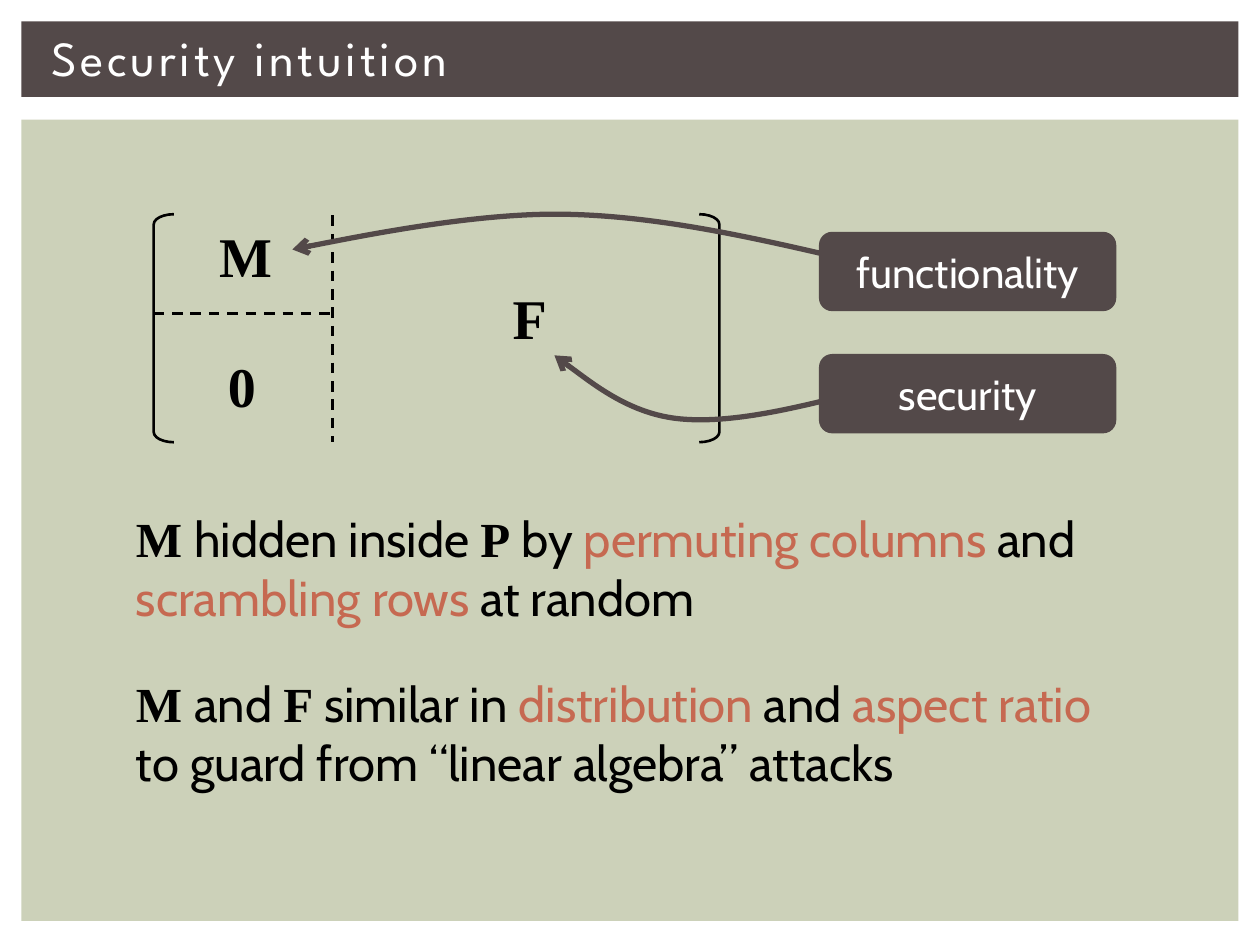
from dataclasses import dataclass

from lxml import etree
from pptx import Presentation
from pptx.dml.color import RGBColor
from pptx.enum.dml import MSO_LINE
from pptx.enum.shapes import MSO_CONNECTOR, MSO_SHAPE
from pptx.enum.text import MSO_ANCHOR, PP_ALIGN
from pptx.oxml.ns import qn
from pptx.util import Inches, Pt

RECT, ROUNDED = MSO_SHAPE.RECTANGLE, MSO_SHAPE.ROUNDED_RECTANGLE
LEFT_BRACKET, RIGHT_BRACKET = MSO_SHAPE.LEFT_BRACKET, MSO_SHAPE.RIGHT_BRACKET
STRAIGHT, DASH = MSO_CONNECTOR.STRAIGHT, MSO_LINE.DASH
MIDDLE, CENTER = MSO_ANCHOR.MIDDLE, PP_ALIGN.CENTER

COLORS = {"white": "FFFFFF", "black": "000000", "brown": "534949",
          "sage": "CCD1B9", "rust": "C66951"}
STYLES = {
    "title": ({"name": "League Spartan", "size": Pt(28)}, "white"),
    "matrix": ({"name": "Times New Roman", "size": Pt(32), "bold": True}, "black"),
    "button": ({"name": "Cabin", "size": Pt(24)}, "white"),
    "math": ({"name": "Times New Roman", "size": Pt(28), "bold": True}, "black"),
    "body": ({"name": "Cabin", "size": Pt(28)}, "black"),
    "key": ({"name": "Cabin", "size": Pt(28)}, "rust"),
}
BREAK = "\n"


@dataclass
class Box:
    x: float
    y: float
    w: float
    h: float

    def emu(self) -> list:
        return [Inches(v) for v in (self.x, self.y, self.w, self.h)]


@dataclass
class Span:
    text: str
    style: str


@dataclass
class Label:
    box: Box
    paragraphs: list[list[Span]]
    wrap: bool = False


def rgb(name: str) -> RGBColor:
    return RGBColor.from_string(COLORS[name])


def set_line(sp, color: str, width: float) -> None:
    sp.line.color.rgb = rgb(color)
    sp.line.width = Pt(width)


def write(tf, paragraphs: list[list[Span]]) -> None:
    for i, spans in enumerate(paragraphs):
        p = tf.add_paragraph() if i else tf.paragraphs[0]
        for span in spans:
            if span.text == BREAK:
                p.add_line_break()
                continue
            r = p.add_run()
            r.text = span.text
            values, color = STYLES[span.style]
            for key, value in values.items():
                setattr(r.font, key, value)
            r.font.color.rgb = rgb(color)


def add_label(s, label: Label):
    tf = s.shapes.add_textbox(*label.box.emu()).text_frame
    tf.word_wrap = label.wrap
    write(tf, label.paragraphs)
    return tf


def add_block(s, kind, box: Box, fill: str):
    sp = s.shapes.add_shape(kind, *box.emu())
    sp.shadow.inherit = False
    sp.fill.solid()
    sp.fill.fore_color.rgb = rgb(fill)
    sp.line.fill.background()
    return sp


def add_button(s, box: Box, text: str) -> None:
    tf = add_block(s, ROUNDED, box, "brown").text_frame
    tf.vertical_anchor = MIDDLE
    write(tf, [[Span(text, "button")]])
    tf.paragraphs[0].alignment = CENTER


def add_bracket(s, kind, box: Box) -> None:
    sp = s.shapes.add_shape(kind, *box.emu())
    sp.shadow.inherit = False
    sp.adjustments[0] = 0.51
    sp.fill.background()
    set_line(sp, "black", 1.5)


def add_divider(s, x1: float, y1: float, x2: float, y2: float) -> None:
    line = s.shapes.add_connector(STRAIGHT, *[Inches(v) for v in (x1, y1, x2, y2)])
    set_line(line, "black", 1.5)
    line.line.dash_style = DASH
    etree.SubElement(line._element.spPr, qn("a:effectLst"))


def add_curved_arrow(s, points: list[tuple[float, float]]) -> None:
    start, *rest = [(Inches(x), Inches(y)) for x, y in points]
    builder = s.shapes.build_freeform(*start)
    builder.add_line_segments(rest, close=False)
    sp = builder.convert_to_shape()
    sp.shadow.inherit = False
    sp.fill.background()
    set_line(sp, "brown", 3)
    segments = list(sp._element.iter(qn("a:lnTo")))
    outline = segments[0].getparent()
    for i in range(0, len(segments), 3):
        curve = etree.SubElement(outline, qn("a:cubicBezTo"))
        for segment in segments[i:i + 3]:
            curve.append(segment[0])
            outline.remove(segment)
    etree.SubElement(sp.line._get_or_add_ln(), qn("a:tailEnd"), type="arrow")


def main() -> None:
    prs = Presentation()
    prs.slide_width, prs.slide_height = Inches(10), Inches(7.5)
    s = prs.slides.add_slide(prs.slide_layouts[6])

    add_block(s, RECT, Box(0.17, 0.95, 9.66, 6.36), "sage")
    add_block(s, RECT, Box(0.17, 0.17, 9.66, 0.6), "brown")
    title = add_label(s, Label(Box(0.31, 0.16, 9.4, 0.59),
                               [[Span("Security intuition", "title")]], True))
    title.vertical_anchor = MIDDLE
    title.paragraphs[0].runs[0].font._element.set("spc", "200")

    add_divider(s, 1.22, 2.49, 2.64, 2.49)
    for kind, x in ((LEFT_BRACKET, 1.22), (RIGHT_BRACKET, 5.55)):
        add_bracket(s, kind, Box(x, 1.7, 0.16, 1.81))
    for text, x, y, w in (("M", 1.64, 1.71, 0.61), ("F", 3.97, 2.2, 0.48),
                          ("0", 1.71, 2.74, 0.41)):
        add_label(s, Label(Box(x, y, w, 0.64), [[Span(text, "matrix")]]))
    add_divider(s, 2.64, 1.71, 2.64, 3.51)

    for text, y in (("functionality", 1.84), ("security", 2.81)):
        add_button(s, Box(6.5, y, 2.36, 0.63), text)
    add_curved_arrow(s, [(6.64, 2.04), (5.91, 1.87), (5.18, 1.71), (4.46, 1.7),
                         (3.74, 1.69), (2.32, 1.98), (2.32, 1.98)])
    add_curved_arrow(s, [(6.78, 3.12), (6.27, 3.25), (5.76, 3.37), (5.36, 3.32),
                         (4.97, 3.27), (4.4, 2.82), (4.4, 2.82)])

    add_label(s, Label(Box(0.98, 3.99, 7.82, 1.04), [
        [Span("M ", "math"), Span("hidden inside ", "body"), Span("P", "math"),
         Span(" by ", "body"), Span("permuting columns", "key"), Span(" and", "body"),
         Span(BREAK, "body"), Span("scrambling rows ", "key"), Span("at random", "body")]]))
    add_label(s, Label(Box(0.98, 5.3, 8.12, 1.04), [
        [Span("M ", "math"), Span("and ", "body"), Span("F", "math"),
         Span(" similar in ", "body"), Span("distribution", "key"),
         Span(" and ", "body"), Span("aspect ratio", "key")],
        [Span("to guard from “linear algebra” attacks", "body")]]))
    prs.save("out.pptx")


if __name__ == "__main__":
    main()
